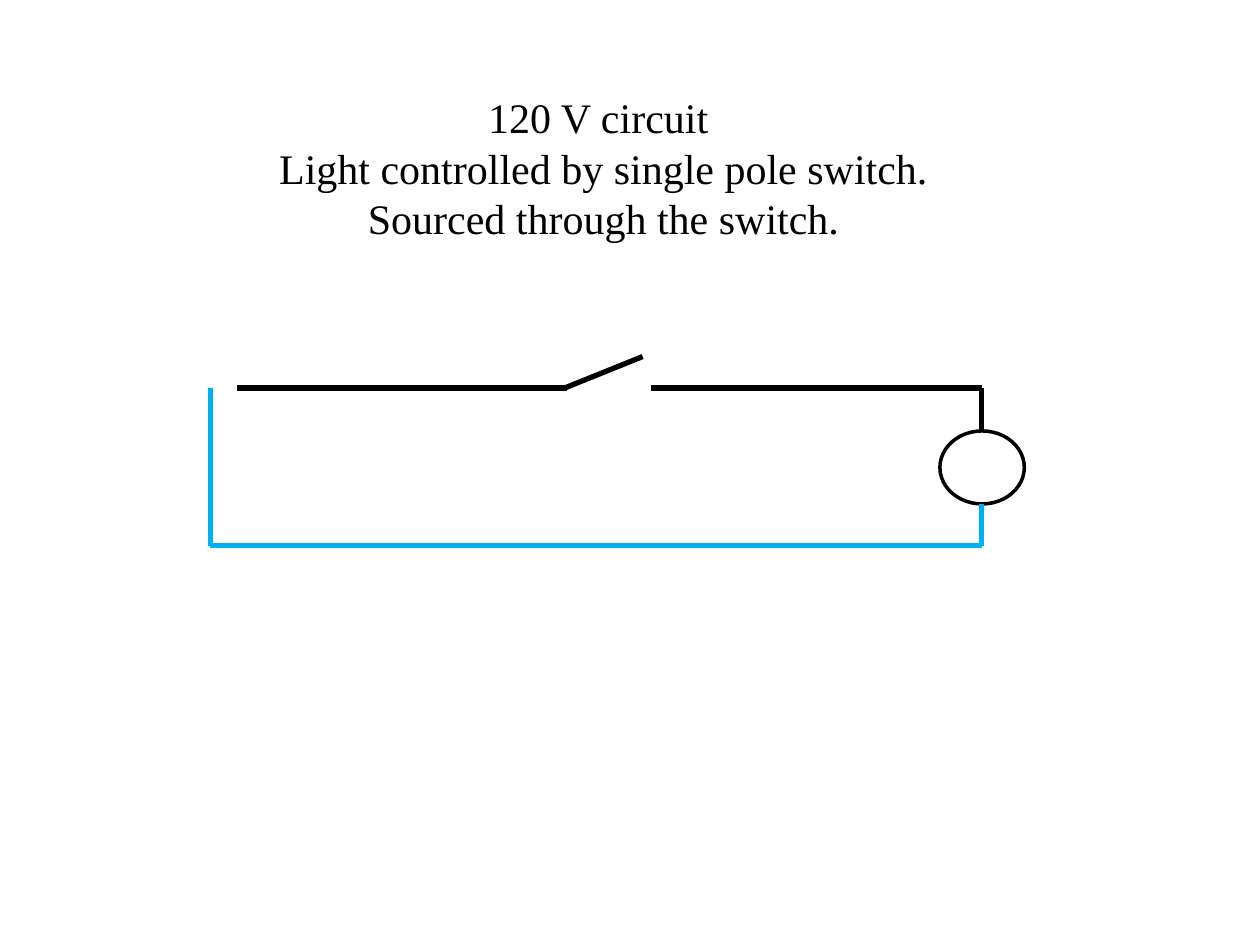
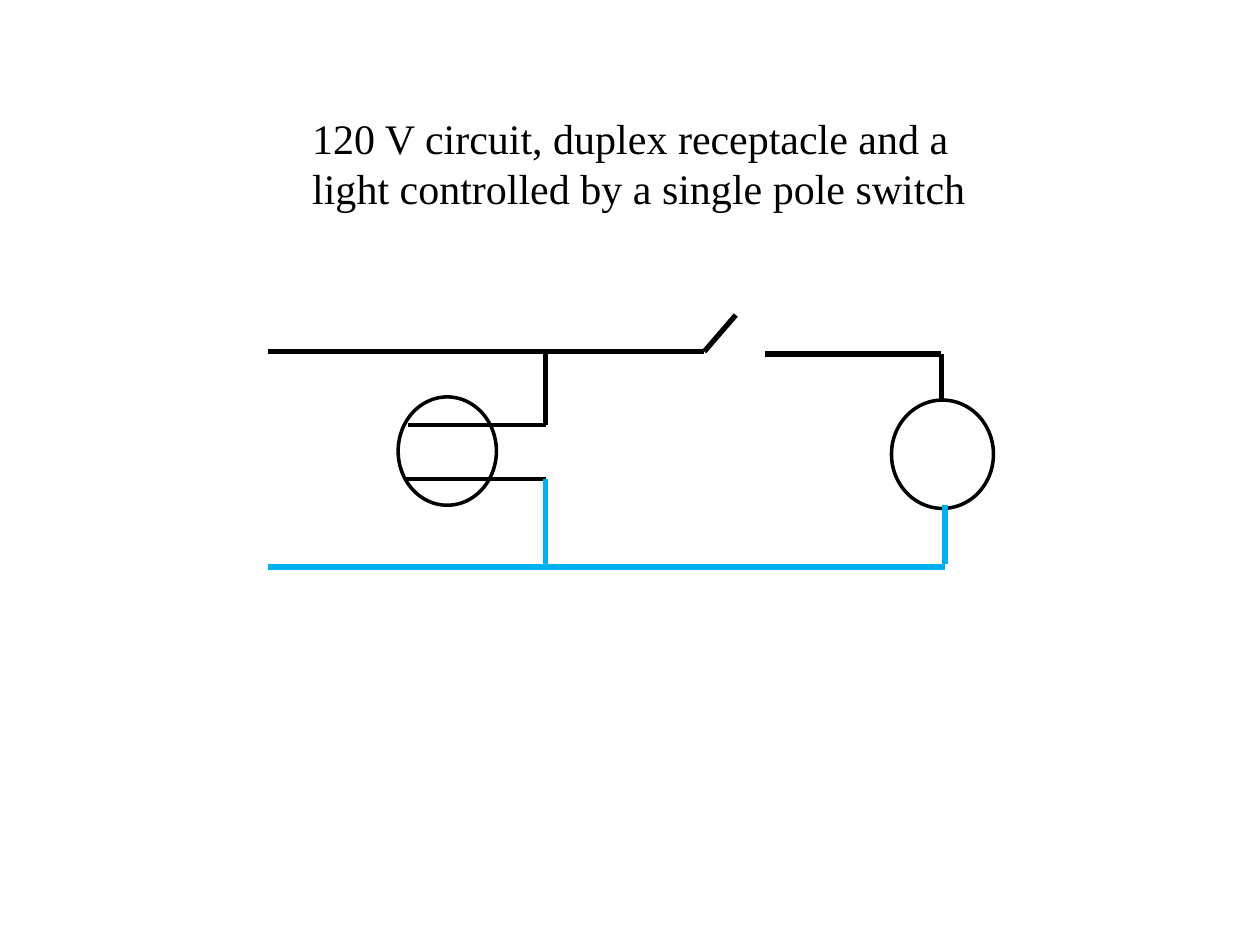
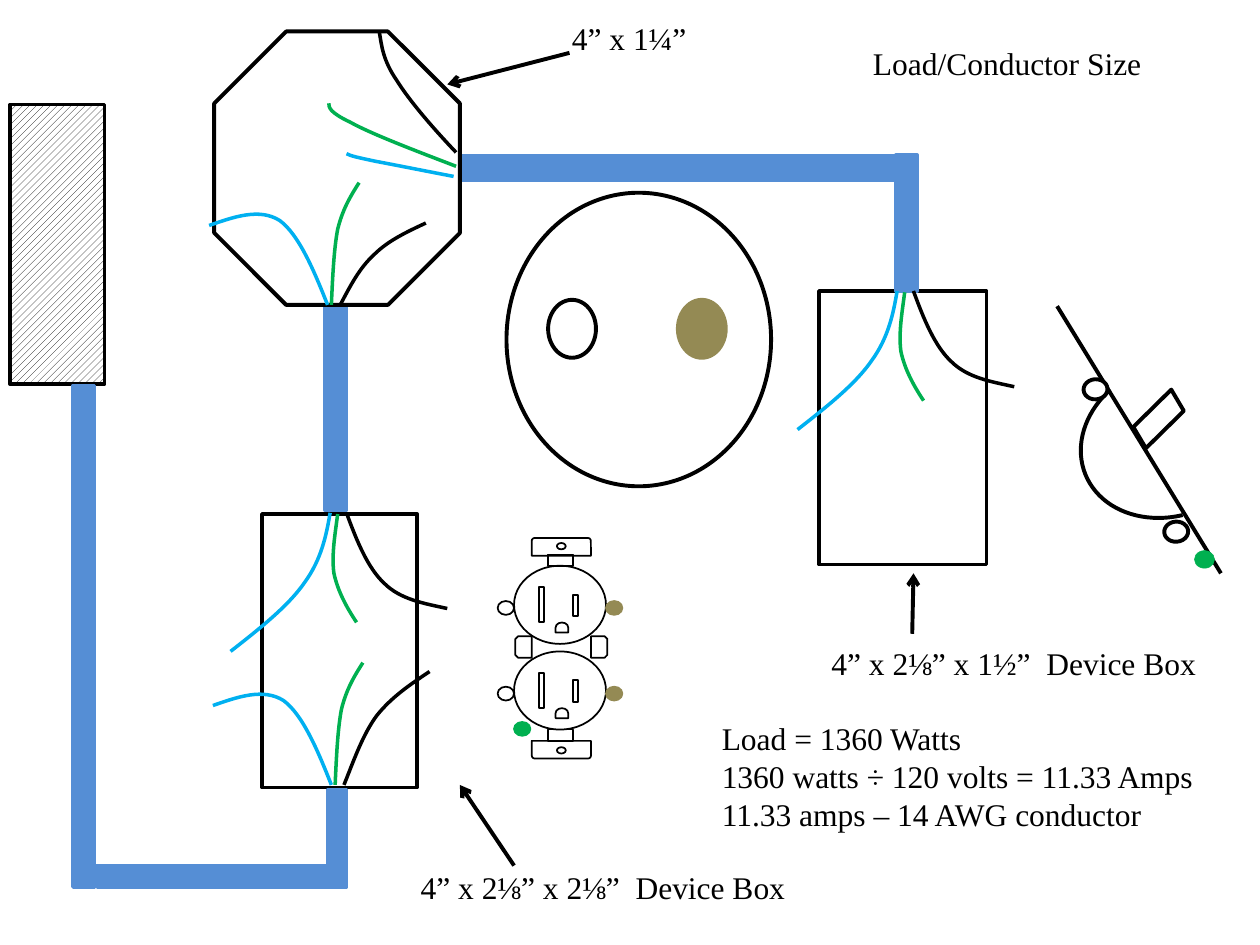
from lxml.etree import SubElement
from pptx import Presentation
from pptx.dml.color import RGBColor
from pptx.enum.dml import MSO_PATTERN
from pptx.enum.shapes import MSO_CONNECTOR, MSO_SHAPE
from pptx.enum.text import MSO_AUTO_SIZE, PP_ALIGN
from pptx.oxml.ns import qn
from pptx.util import Emu, Pt

SCALE = 9144
FONT = "Times New Roman"
COLOURS = {
    "hot": "000000",
    "neutral": "00B0F0",
    "ground": "00B050",
    "cable": "558ED5",
    "brass": "948A54",
    "white": "FFFFFF",
}


def px(value):
    return Emu(value * SCALE)


def colour(name):
    return RGBColor.from_string(COLOURS[name])


def add_figure(slide, kind, box, width, line="hot", fill=None, rotation=0):
    shape = slide.shapes.add_shape(kind, *map(px, box))
    shape.shadow.inherit = False
    shape.rotation = rotation
    if fill:
        shape.fill.solid()
        shape.fill.fore_color.rgb = colour(fill)
    else:
        shape.fill.background()
    shape.line.color.rgb = colour(line)
    shape.line.width = Pt(width)
    return shape


def add_wire(slide, start, end, width=3, line="hot", arrow=False):
    connector = slide.shapes.add_connector(
        MSO_CONNECTOR.STRAIGHT, *map(px, start + end))
    connector.line.color.rgb = colour(line)
    connector.line.width = Pt(width)
    if arrow:
        SubElement(connector.line._get_or_add_ln(), qn("a:tailEnd"), type="arrow")
    SubElement(connector._element.spPr, qn("a:effectLst"))
    return connector


def bend_segments(shape, track):
    outline = shape._element.spPr.find(".//" + qn("a:path"))
    for segment in outline.findall(qn("a:lnTo")):
        outline.remove(segment)
    for first in range(1, len(track), 3):
        curve = SubElement(outline, qn("a:cubicBezTo"))
        for x, y in track[first:first + 3]:
            SubElement(curve, qn("a:pt"), x=str(x - shape.left), y=str(y - shape.top))


def add_curved_wire(slide, line, points, dx=0, dy=0):
    track = [(px(x + dx), px(y + dy)) for x, y in points]
    builder = slide.shapes.build_freeform(*track[0])
    builder.add_line_segments(track[3::3], close=False)
    shape = builder.convert_to_shape()
    bend_segments(shape, track)
    shape.shadow.inherit = False
    shape.fill.background()
    shape.line.color.rgb = colour(line)
    shape.line.width = Pt(2)


def add_text(slide, box, lines, size, align=PP_ALIGN.LEFT):
    frame = slide.shapes.add_textbox(*map(px, box)).text_frame
    frame.word_wrap = True
    frame.auto_size = MSO_AUTO_SIZE.SHAPE_TO_FIT_TEXT
    for index, line in enumerate(lines):
        paragraph = frame.add_paragraph() if index else frame.paragraphs[0]
        paragraph.alignment = align
        run = paragraph.add_run()
        run.text = line
        run.font.name = FONT
        run.font.size = Pt(size)
        run.font.color.rgb = colour("hot")


def add_callout(slide, box, text, start, end):
    add_text(slide, box, [text], 18)
    add_wire(slide, start, end, 2.25, arrow=True)


def add_cable(slide, *box):
    add_figure(slide, MSO_SHAPE.RECTANGLE, box, 2, "cable", "cable")


def add_top_leads(slide, dx=0, dy=0):
    leads = {
        "neutral": [(262, 407), (259, 425), (255, 444), (242, 462),
                    (229, 481), (206, 499), (183, 517)],
        "ground": [(268, 408), (266, 424), (263, 440), (265, 455),
                   (268, 469), (275, 482), (283, 494)],
        "hot": [(275, 407), (283, 429), (292, 451), (305, 463),
                (318, 476), (337, 479), (355, 483)],
    }
    for line, points in leads.items():
        add_curved_wire(slide, line, points, dx, dy)


def add_bottom_leads(slide, hot_points, dx=0, dy=0):
    leads = {
        "neutral": [(263, 623), (252, 595), (240, 567), (225, 556),
                    (209, 546), (189, 553), (169, 560)],
        "ground": [(266, 623), (267, 601), (268, 579), (271, 563),
                   (275, 547), (281, 537), (288, 526)],
    }
    for line, points in leads.items():
        add_curved_wire(slide, line, points, dx, dy)
    add_curved_wire(slide, "hot", hot_points)


def add_screw(slide, left, top, line="hot", fill=None):
    add_figure(slide, MSO_SHAPE.OVAL, (left, top, 13, 11), 1, line, fill)


def add_outlet(slide, top):
    add_figure(slide, MSO_SHAPE.OVAL, (408, top, 73, 62), 1)
    add_figure(slide, MSO_SHAPE.RECTANGLE, (428, top + 17, 4, 28), 1)
    add_figure(slide, MSO_SHAPE.RECTANGLE, (455, top + 23, 4, 17), 1)
    add_figure(slide, MSO_SHAPE.FLOWCHART_DELAY, (442, top + 44, 8, 10), 1, rotation=270)
    add_screw(slide, 395, top + 28)
    add_screw(slide, 481, top + 28, "brass", "brass")


def add_strap(slide, plate_top, neck_top, hole_top, rotation):
    for kind, box in (
        (MSO_SHAPE.ROUND_2_SAME_RECTANGLE, (422, plate_top, 47, 14)),
        (MSO_SHAPE.RECTANGLE, (435, neck_top, 20, 9)),
        (MSO_SHAPE.OVAL, (442, hole_top, 7, 5)),
    ):
        add_figure(slide, kind, box, 1, rotation=rotation)


def add_receptacle(slide):
    for top in (517, 449):
        add_outlet(slide, top)
    add_strap(slide, 427, 440, 431, 0)
    add_strap(slide, 588, 579, 593, 180)
    add_screw(slide, 408, 573, "ground", "ground")
    for left, rotation in ((467, 90), (407, 270)):
        add_figure(slide, MSO_SHAPE.SNIP_2_SAME_RECTANGLE, (left, 507, 17, 13), 1,
                   rotation=rotation)


def add_toggle_switch(slide):
    body = add_figure(slide, MSO_SHAPE.ARC, (856, 289, 146, 120), 2.25, rotation=157.7)
    body.adjustments[0] = 169.91
    body.adjustments[1] = 37.19
    add_wire(slide, (839, 243), (969, 455), 2.25)
    add_figure(slide, MSO_SHAPE.OVAL, (924, 414, 19, 16), 2.25, fill="white", rotation=356)
    add_figure(slide, MSO_SHAPE.PARALLELOGRAM, (896, 323, 47, 19), 2.25, rotation=315.4)
    add_figure(slide, MSO_SHAPE.OVAL, (948, 437, 16, 14), 0.25, "ground", "ground")
    add_figure(slide, MSO_SHAPE.OVAL, (860, 301, 19, 16), 2.25, fill="white", rotation=356)


def add_lampholder(slide):
    add_figure(slide, MSO_SHAPE.OVAL, (402, 153, 210, 233), 2.25)
    add_figure(slide, MSO_SHAPE.OVAL, (435, 238, 38, 46), 2.25)
    add_figure(slide, MSO_SHAPE.OVAL, (538, 238, 38, 46), 2.25, "brass", "brass")


def add_octagon_leads(slide):
    add_bottom_leads(slide, [(270, 242), (278, 227), (285, 213), (297, 202),
                             (308, 191), (323, 184), (338, 177)], -3, -381)
    add_curved_wire(slide, "hot", [(362, 121), (343, 101), (325, 80), (315, 64),
                                   (304, 48), (303, 37), (301, 25)])
    add_curved_wire(slide, "ground", [(362, 132), (328, 119), (294, 106), (278, 97),
                                      (261, 89), (261, 85), (261, 82)])
    add_curved_wire(slide, "neutral", [(360, 140), (339, 136), (319, 132), (298, 128),
                                       (284, 125), (279, 124), (275, 122)])


def add_panel(slide):
    panel = add_figure(slide, MSO_SHAPE.RECTANGLE, (8, 83, 75, 222), 2)
    panel.fill.patterned()
    panel.fill.pattern = MSO_PATTERN.WIDE_UPWARD_DIAGONAL
    panel.fill.fore_color.rgb = colour("hot")
    panel.fill.back_color.rgb = colour("white")


def build_switched_light(slide):
    add_wire(slide, (188, 308), (450, 308))
    add_wire(slide, (448, 308), (510, 283))
    add_wire(slide, (517, 308), (779, 308))
    add_figure(slide, MSO_SHAPE.OVAL, (746, 342, 67, 58), 2, fill="white")
    add_wire(slide, (779, 308), (779, 342))
    add_wire(slide, (779, 400), (779, 433), line="neutral")
    add_wire(slide, (167, 433), (779, 433), line="neutral")
    add_wire(slide, (167, 308), (167, 433), line="neutral")
    add_text(slide, (156, 68, 646, 131), [
        "120 V circuit ",
        "Light controlled by single pole switch. Sourced through the switch.",
    ], 24, PP_ALIGN.CENTER)


def build_receptacle_and_light(slide):
    add_figure(slide, MSO_SHAPE.OVAL, (705, 320, 86, 81), 2, rotation=270)
    add_figure(slide, MSO_SHAPE.OVAL, (312, 319, 86, 78), 2, rotation=270)
    add_wire(slide, (321, 380), (433, 380), 2.25)
    add_wire(slide, (324, 337), (433, 337), 2.25)
    add_wire(slide, (213, 279), (559, 279))
    add_wire(slide, (213, 450), (750, 450), line="neutral")
    add_wire(slide, (747, 281), (747, 317))
    add_wire(slide, (750, 401), (750, 448), line="neutral")
    add_wire(slide, (433, 279), (433, 337))
    add_wire(slide, (433, 380), (433, 450), line="neutral")
    add_wire(slide, (559, 279), (584, 250))
    add_wire(slide, (607, 281), (747, 281))
    add_text(slide, (238, 84, 550, 91), [
        "120 V circuit, duplex receptacle and a light controlled by a single pole switch",
    ], 24)


def build_wiring_layout(slide):
    add_figure(slide, MSO_SHAPE.RECTANGLE, (208, 408, 123, 217), 2)
    add_receptacle(slide)
    add_figure(slide, MSO_SHAPE.RECTANGLE, (650, 231, 133, 217), 2)
    add_cable(slide, 258, 216, 17, 189)
    add_panel(slide)
    add_cable(slide, 77, 687, 187, 17)
    add_cable(slide, 58, 306, 17, 398)
    add_cable(slide, 711, 123, 17, 108)
    add_cable(slide, 365, 124, 360, 19)
    add_cable(slide, 260, 627, 15, 77)
    add_top_leads(slide)
    add_bottom_leads(slide, [(273, 623), (281, 603), (288, 583), (299, 568),
                             (311, 553), (326, 543), (341, 533)])
    add_figure(slide, MSO_SHAPE.OCTAGON, (170, 25, 195, 217), 2.25, fill="white")
    add_toggle_switch(slide)
    add_octagon_leads(slide)
    add_top_leads(slide, 450, -176)
    add_lampholder(slide)
    add_callout(slide, (324, 684, 326, 40), "4” x 2⅛” x 2⅛”  Device Box",
                (408, 687), (365, 623))
    add_callout(slide, (444, 10, 119, 40), "4” x 1¼”", (452, 42), (355, 67))
    add_callout(slide, (650, 506, 319, 40), "4” x 2⅛” x 1½”  Device Box",
                (724, 503), (725, 455))
    add_text(slide, (683, 30, 281, 40), ["Load/Conductor Size"], 18)
    add_text(slide, (563, 566, 408, 101), [
        "Load = 1360 Watts",
        "1360 watts ÷ 120 volts = 11.33 Amps",
        "11.33 amps – 14 AWG conductor",
    ], 18)


def main():
    presentation = Presentation()
    presentation.slide_width = px(1000)
    presentation.slide_height = px(750)
    for build in (build_switched_light, build_receptacle_and_light, build_wiring_layout):
        build(presentation.slides.add_slide(presentation.slide_layouts[6]))
    presentation.save("out.pptx")


if __name__ == "__main__":
    main()
